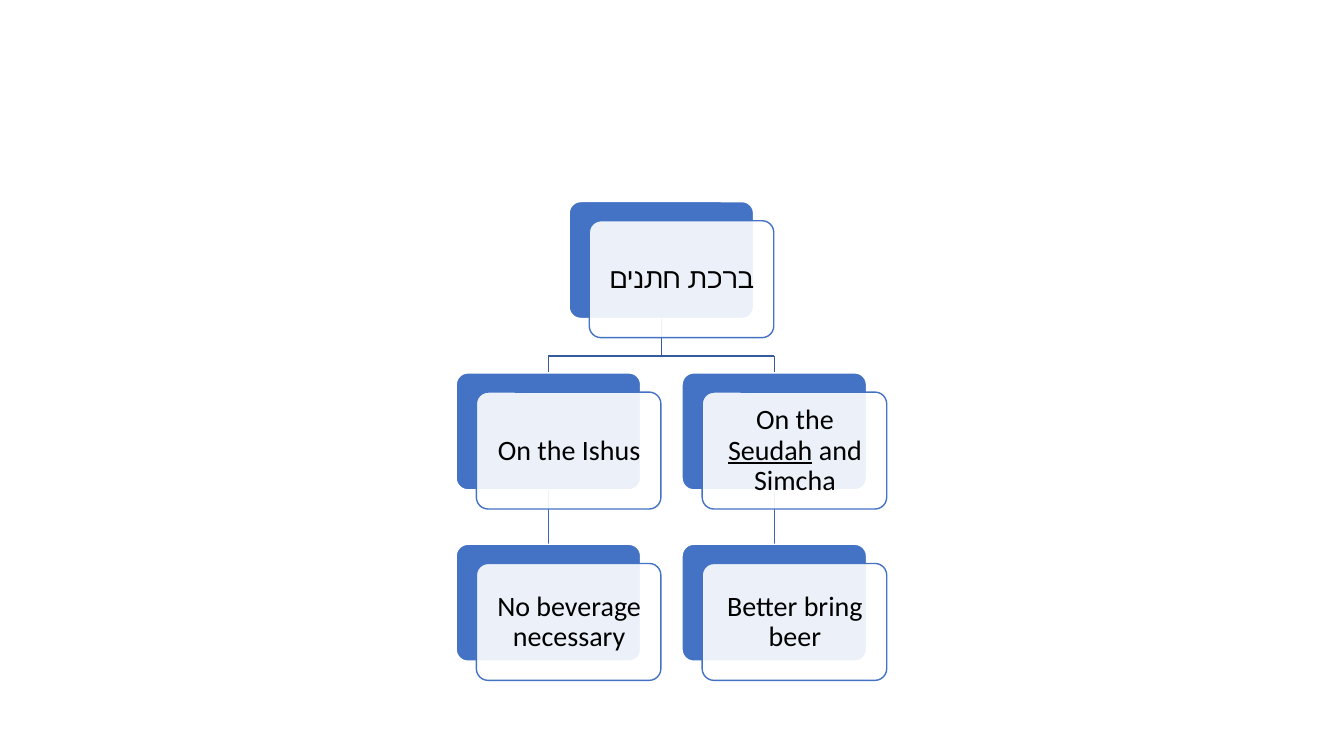
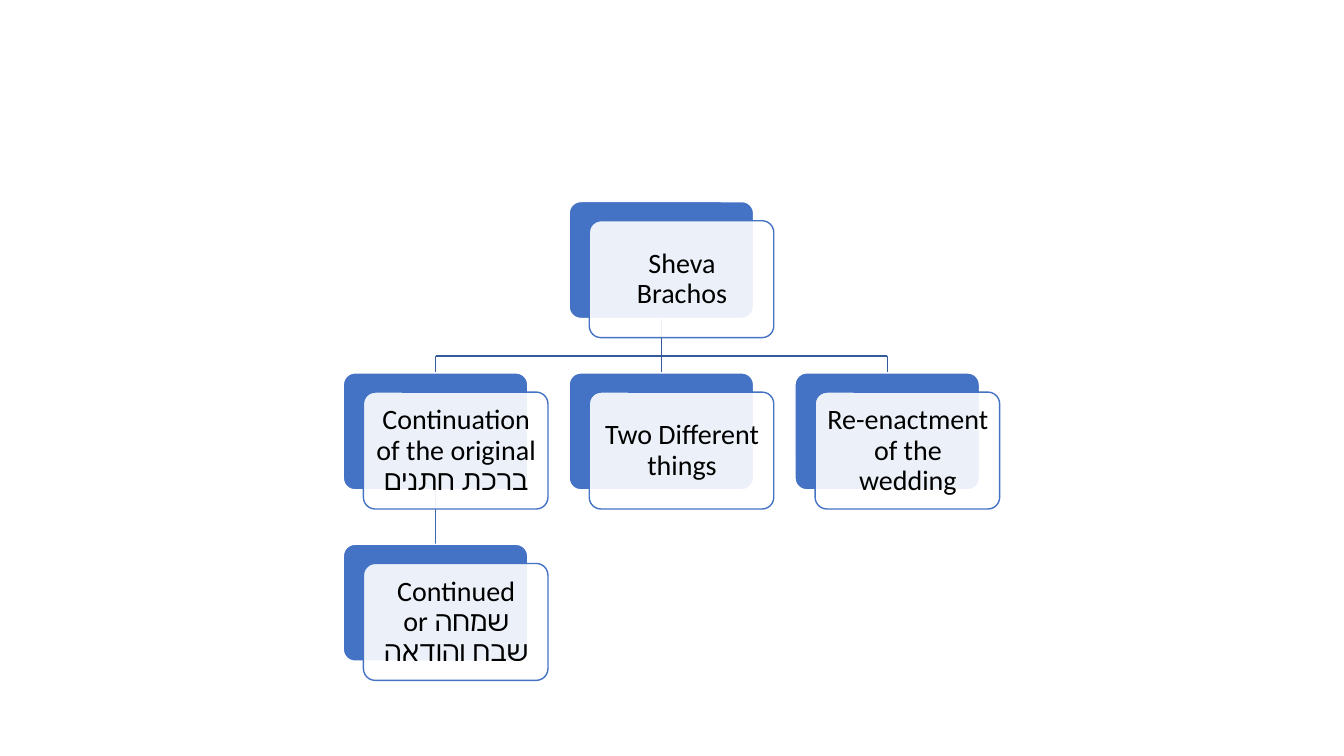
from itertools import pairwise

from lxml import etree
from pptx import Presentation
from pptx import util as u
from pptx.dml.color import RGBColor
from pptx.enum import shapes, text
from pptx.oxml.ns import qn

COLOURS = {
    "card": "4472C4",
    "paper": "FFFFFF",
    "ink": "000000",
    "trunk": "365B9D",
    "twig": "3E67B2",
}
FONT, FONT_SIZE = "Calibri", 20

SLIDE_WIDTH, SLIDE_HEIGHT = 13.33, 7.5
CENTRE, TOP = 6.56, 2.0           # middle of column 0, top of row 0
COLUMN, ROW = 2.24, 1.7           # distance between neighbouring cards
CARD_WIDTH, CARD_HEIGHT = 1.83, 1.16
OFFSET_X, OFFSET_Y = 0.2, 0.19    # front card against back card
BEND = 0.37                       # drop from a card to the crossbar

# Each node: (column, row, text runs, parent index); "_" before a run underlines it.
TREES = [
    [
        (0, 0, ["ברכת חתנים"], None),
        (-0.5, 1, ["On the Ishus"], 0),
        (-0.5, 2, ["No beverage necessary"], 1),
        (0.5, 1, ["On the ", "_Seudah", " and Simcha"], 0),
        (0.5, 2, ["Better bring beer"], 3),
    ],
    [
        (0, 0, ["Sheva Brachos"], None),
        (-1, 1, ["Continuation of the original ברכת חתנים"], 0),
        (-1, 2, ["Continued שמחה or שבח והודאה"], 1),
        (0, 1, ["Two Different things"], 0),
        (1, 1, ["Re-enactment of the wedding"], 0),
    ],
]


def colour(name):
    return RGBColor.from_string(COLOURS[name])


def card_top(column, row):
    """Middle of the top edge of the back card in a grid cell."""
    return CENTRE + column * COLUMN, TOP + row * ROW


def add_line(slide, start, end, colour_name):
    line = slide.shapes.add_connector(
        shapes.MSO_CONNECTOR.STRAIGHT, *(u.Inches(n) for n in (*start, *end)))
    line.line.color.rgb = colour(colour_name)
    line.line.width = u.Pt(1)
    etree.SubElement(line._element.spPr, qn("a:effectLst"))


def add_branch(slide, parent, child):
    """Link two cards, with a crossbar when they stand in different columns."""
    x1, y1 = card_top(*parent[:2])
    x2, y2 = card_top(*child[:2])
    y1 += CARD_HEIGHT
    corners = [] if x1 == x2 else [(x1, y1 + BEND), (x2, y1 + BEND)]
    name = "trunk" if parent[1] == 0 else "twig"
    for start, end in pairwise([(x1, y1), *corners, (x2, y2)]):
        add_line(slide, start, end, name)


def add_card(slide, left, top, fill, line):
    card = slide.shapes.add_shape(
        shapes.MSO_SHAPE.ROUNDED_RECTANGLE,
        *(u.Inches(n) for n in (left, top, CARD_WIDTH, CARD_HEIGHT)))
    card.adjustments[0] = 0.1
    card.shadow.inherit = False
    card.fill.solid()
    card.fill.fore_color.rgb = colour(fill)
    card.line.color.rgb = colour(line)
    card.line.width = u.Pt(1)
    return card


def set_opacity(shape, percent):
    fill_colour = shape._element.spPr.find(qn("a:solidFill"))[0]
    etree.SubElement(fill_colour, qn("a:alpha"), val=str(percent * 1000))


def write_label(shape, runs):
    frame = shape.text_frame
    frame.word_wrap = True
    frame.vertical_anchor = text.MSO_ANCHOR.MIDDLE
    frame.margin_left = frame.margin_top = u.Inches(0.08)
    frame.margin_right = frame.margin_bottom = u.Inches(0.07)
    paragraph = frame.paragraphs[0]
    paragraph.alignment = text.PP_ALIGN.CENTER
    paragraph.line_spacing = 0.9
    paragraph._p.get_or_add_pPr().set("rtl", "1")
    for words in runs:
        run = paragraph.add_run()
        run.text = words.removeprefix("_")
        run.font.name = FONT
        run.font.size = u.Pt(FONT_SIZE)
        run.font.color.rgb = colour("ink")
        if words.startswith("_"):
            run.font.underline = True


def add_node(slide, column, row, runs):
    """A solid card with a translucent, labelled card in front of it."""
    middle, top = card_top(column, row)
    left = middle - CARD_WIDTH / 2
    add_card(slide, left, top, "card", "paper")
    front = add_card(slide, left + OFFSET_X, top + OFFSET_Y, "paper", "card")
    set_opacity(front, 90)
    write_label(front, runs)


def add_tree(slide, nodes):
    for node in nodes:
        if node[3] is not None:
            add_branch(slide, nodes[node[3]], node)
    for column, row, runs, _ in nodes:
        add_node(slide, column, row, runs)


def main():
    presentation = Presentation()
    presentation.slide_width = u.Inches(SLIDE_WIDTH)
    presentation.slide_height = u.Inches(SLIDE_HEIGHT)
    for nodes in TREES:
        add_tree(presentation.slides.add_slide(presentation.slide_layouts[6]), nodes)
    presentation.save("out.pptx")


if __name__ == "__main__":
    main()
